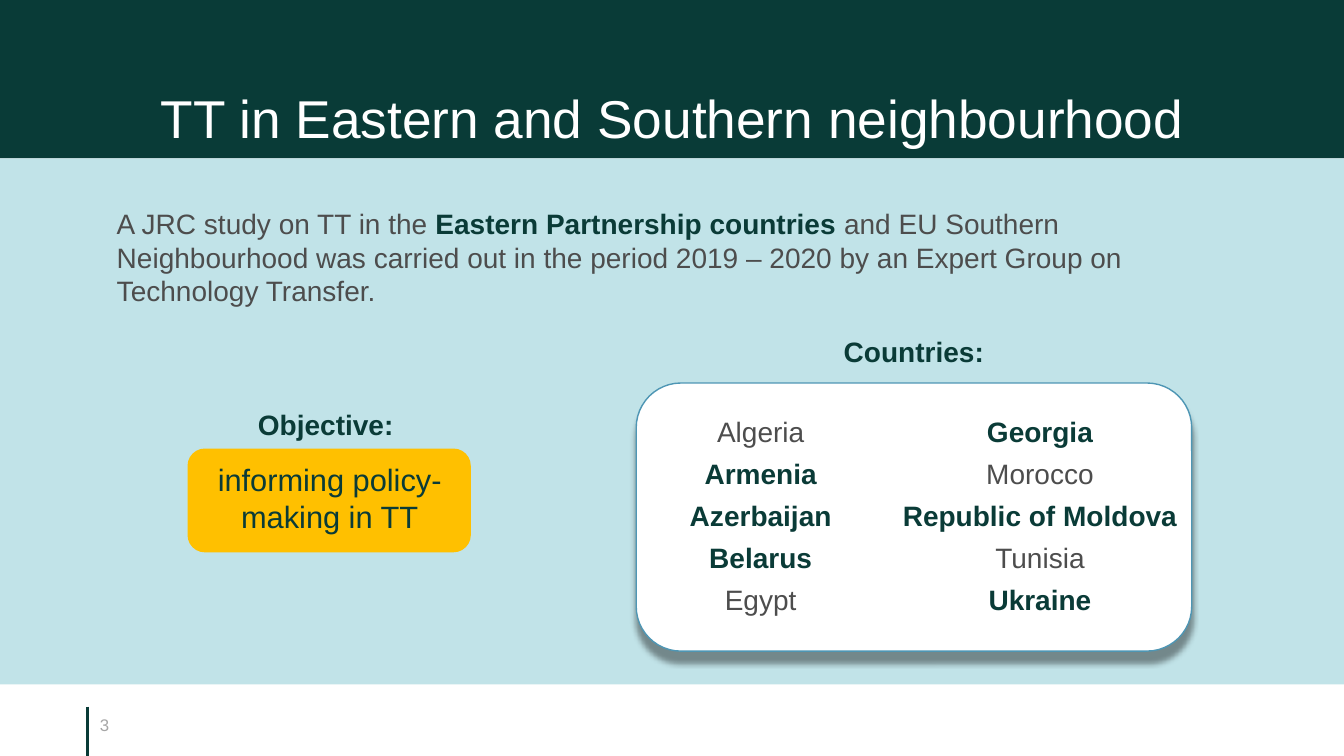
"""Builds the slide on technology transfer in the Eastern and Southern neighbourhood."""
import pptx
import pptx.util
import pptx.dml.color
import pptx.enum.shapes
import pptx.enum.text
import pptx.oxml
import pptx.oxml.ns

Inches = pptx.util.Inches
Pt = pptx.util.Pt
RGBColor = pptx.dml.color.RGBColor
SHAPE = pptx.enum.shapes.MSO_SHAPE
ALIGN = pptx.enum.text.PP_ALIGN

WHITE = RGBColor(0xFF, 0xFF, 0xFF)
GREEN = RGBColor(0x0A, 0x3B, 0x37)
BAND_GREEN = RGBColor(0x09, 0x3B, 0x37)
PALE_BLUE = RGBColor(0xC1, 0xE3, 0xE8)
OUTLINE_BLUE = RGBColor(0x4E, 0x96, 0xB4)
AMBER = RGBColor(0xFF, 0xC0, 0x00)
GREY = RGBColor(0x4D, 0x4D, 0x4D)
LIGHT_GREY = RGBColor(0xA6, 0xA6, 0xA6)

prs = pptx.Presentation()
prs.slide_width = Inches(13.33)
prs.slide_height = Inches(7.5)
slide = prs.slides.add_slide(prs.slide_layouts[6])


def add_panel(kind, left, top, width, height, color):
    panel = slide.shapes.add_shape(kind, Inches(left), Inches(top), Inches(width), Inches(height))
    panel.shadow.inherit = False
    panel.fill.solid()
    panel.fill.fore_color.rgb = color
    panel.line.fill.background()
    return panel


def add_text(left, top, width, height, paragraphs, size, align=ALIGN.LEFT, space_after=0):
    """Each paragraph is a list of (text, colour, bold) runs."""
    frame = slide.shapes.add_textbox(
        Inches(left), Inches(top), Inches(width), Inches(height)).text_frame
    frame.word_wrap = True
    for index, runs in enumerate(paragraphs):
        paragraph = frame.paragraphs[0] if index == 0 else frame.add_paragraph()
        paragraph.alignment = align
        paragraph.space_after = Pt(space_after)
        for text, color, bold in runs:
            run = paragraph.add_run()
            run.text = text
            run.font.name = "Arial"
            run.font.size = Pt(size)
            run.font.bold = bold
            run.font.color.rgb = color
    return frame


page_number = add_text(0.99, 7.04, 0.49, 0.3, [[("3", LIGHT_GREY, False)]], 12)
page_number.margin_left = page_number.margin_right = 0

footer_rule = slide.shapes.add_connector(
    pptx.enum.shapes.MSO_CONNECTOR.STRAIGHT,
    Inches(0.87), Inches(7.01), Inches(0.87), Inches(7.5))
footer_rule.line.color.rgb = BAND_GREEN
footer_rule.line.width = Pt(2.25)
footer_rule._element.spPr.append(pptx.oxml.parse_xml(
    f'<a:effectLst {pptx.oxml.ns.nsdecls("a")}/>'))

add_panel(SHAPE.RECTANGLE, 0, 1.57, 13.33, 5.22, PALE_BLUE)
add_panel(SHAPE.RECTANGLE, 0, 0, 13.33, 1.57, BAND_GREEN)

title = add_text(1.06, 0.63, 11.22, 0.86,
                 [[("TT in Eastern and Southern neighbourhood", WHITE, False)]], 38, ALIGN.CENTER)
title.vertical_anchor = pptx.enum.text.MSO_ANCHOR.BOTTOM
title.margin_bottom = 0
title.paragraphs[0].line_spacing = 0.9

add_text(1.06, 2, 11.23, 1.18, [[
    ("A JRC study on TT in the ", GREY, False),
    ("Eastern Partnership countries ", GREEN, True),
    ("and EU Southern Neighbourhood was carried out in the period 2019 – 2020 "
     "by an Expert Group on Technology Transfer.", GREY, False),
]], 20, space_after=18)

countries_card = add_panel(SHAPE.ROUNDED_RECTANGLE, 6.31, 3.8, 5.51, 2.66, WHITE)
countries_card.line.color.rgb = OUTLINE_BLUE
countries_card.line.width = Pt(1)
card_effects = countries_card._element.spPr.find(pptx.oxml.ns.qn("a:effectLst"))
card_effects.append(pptx.oxml.parse_xml(
    f'<a:outerShdw {pptx.oxml.ns.nsdecls("a")} blurRad="{Pt(4)}" dist="{Pt(8)}" '
    'dir="5400000" algn="ctr" rotWithShape="0"><a:srgbClr val="000000">'
    '<a:alpha val="40000"/></a:srgbClr></a:outerShdw>'))

country_columns = [
    ["Algeria", "Armenia", "Azerbaijan", "Belarus", "Egypt"],
    ["Georgia", "Morocco", "Republic of Moldova", "Tunisia", "Ukraine"],
]
eastern_partners = {"Armenia", "Azerbaijan", "Belarus", "Georgia",
                    "Republic of Moldova", "Ukraine"}
COLUMN_WIDTH = 2.77
for column, countries in enumerate(country_columns):
    rows = [[(country, GREEN if country in eastern_partners else GREY,
              country in eastern_partners)] for country in countries]
    country_list = add_text(6.16 + column * COLUMN_WIDTH, 4.06, COLUMN_WIDTH, 2.22,
                            rows, 20, ALIGN.CENTER, space_after=6)
    country_list.margin_left = country_list.margin_right = 0

add_panel(SHAPE.ROUNDED_RECTANGLE, 1.86, 4.45, 2.81, 1.03, AMBER)
add_text(1.86, 4.52, 2.82, 0.98, [[("informing policy-making in TT", GREEN, False)]],
         22, ALIGN.CENTER, space_after=18)

for heading, left, top in [("Objective:", 2.46, 3.99), ("Countries:", 8.27, 3.27)]:
    add_text(left, top, 1.6, 0.84, [[(heading, GREEN, True)]], 20)

prs.save("out.pptx")
